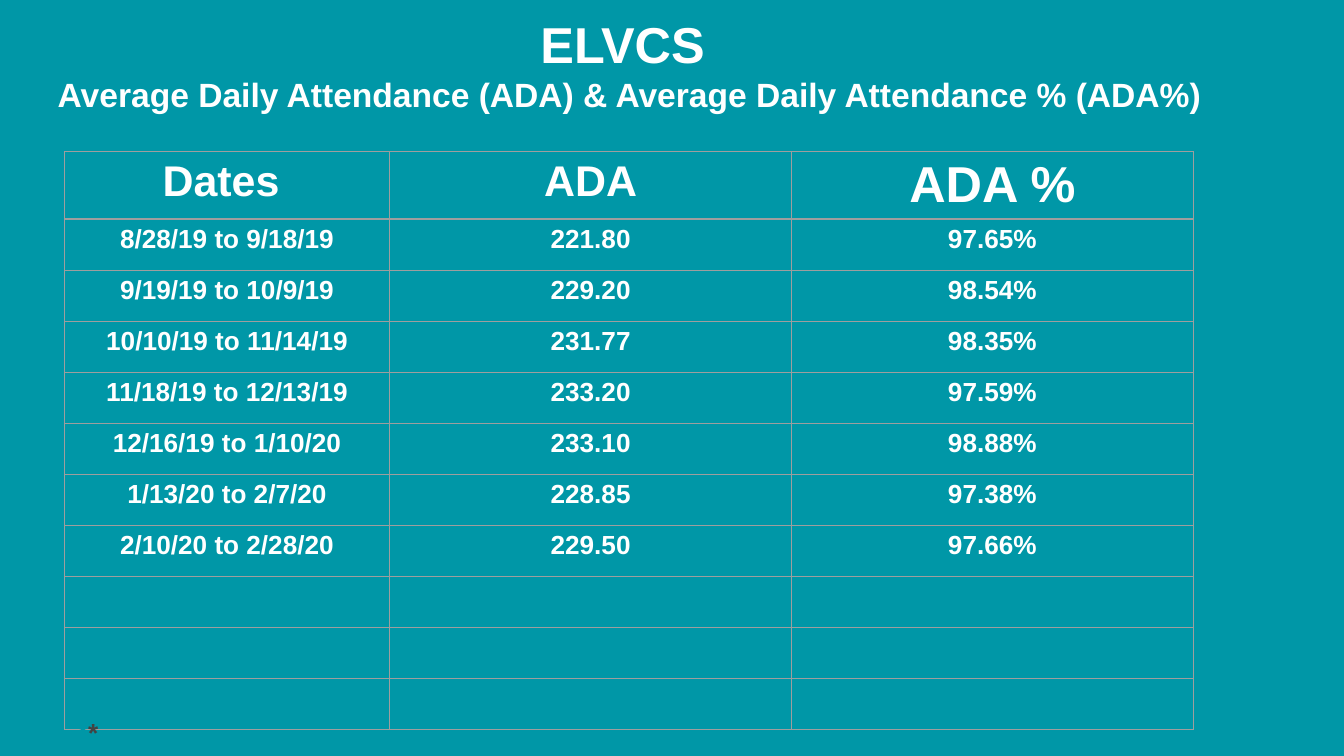
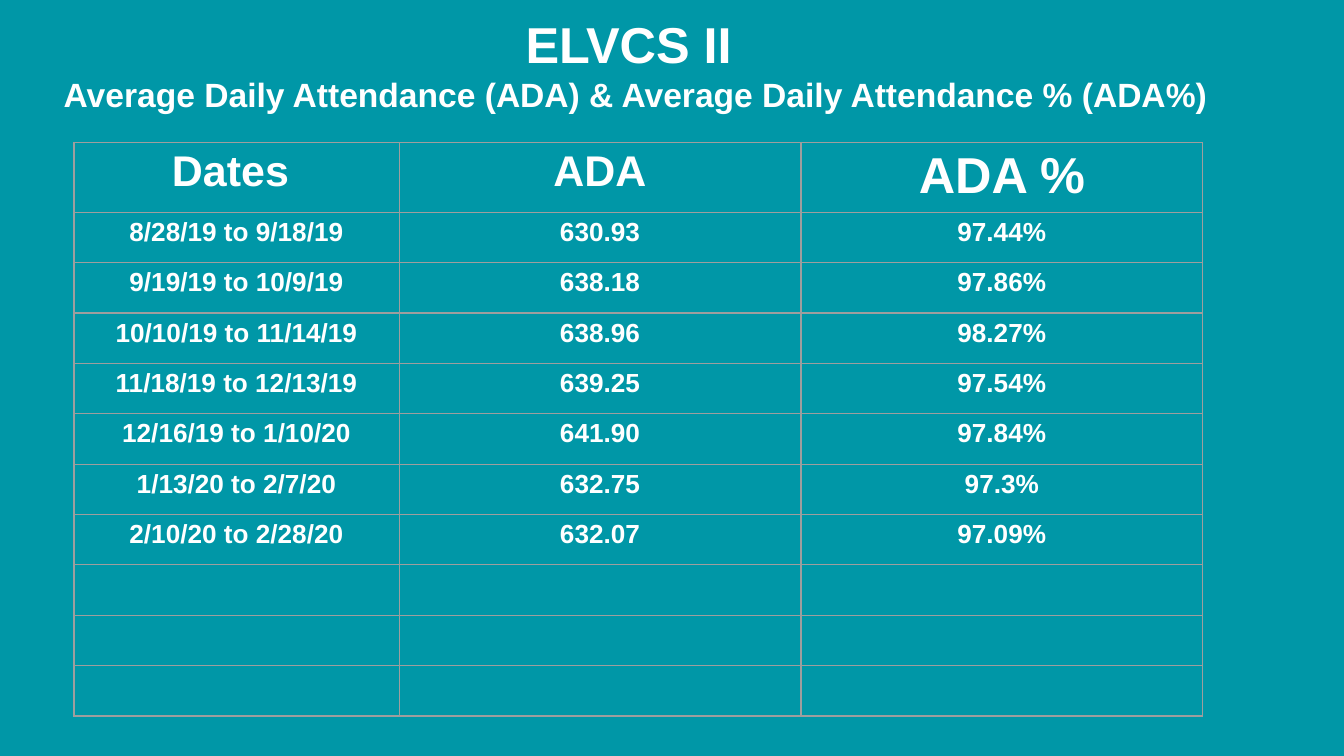
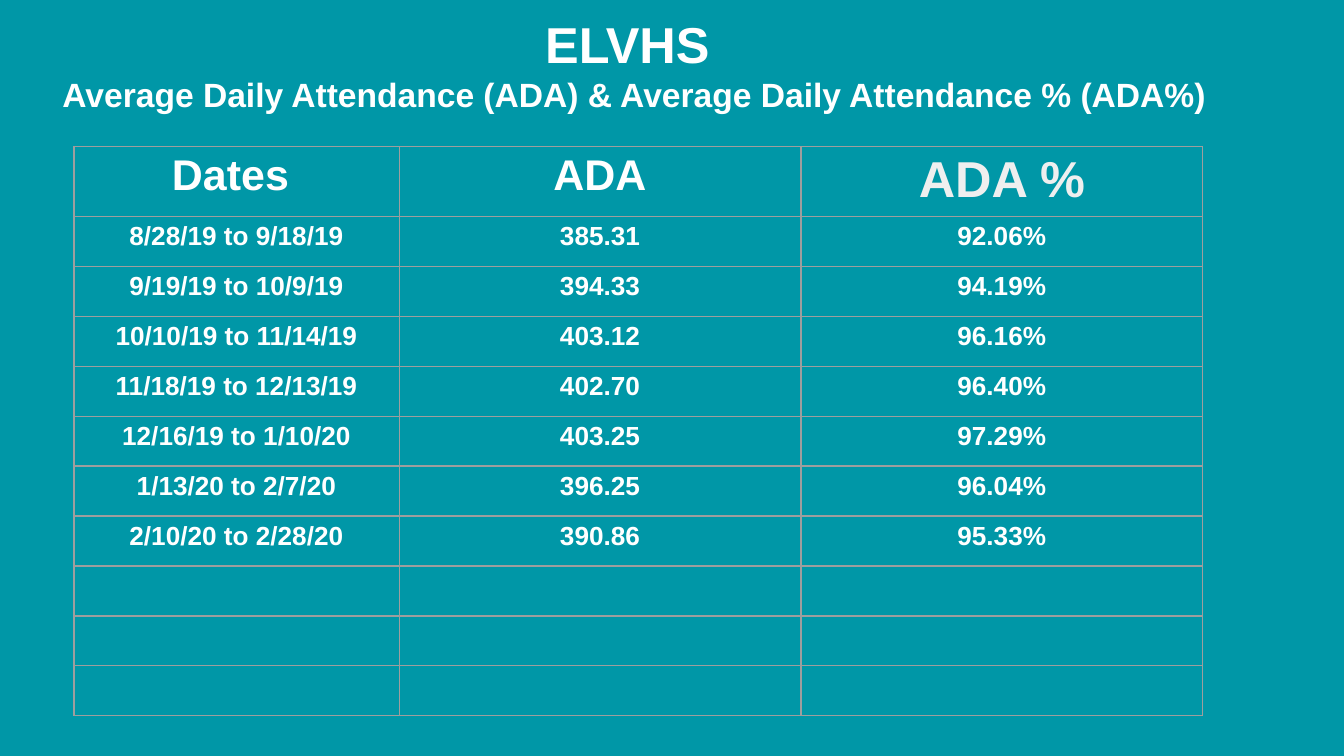
from dataclasses import dataclass

import pptx
import pptx.dml.color
import pptx.enum.text
import pptx.oxml
import pptx.oxml.ns
import pptx.util
from pptx.util import Inches

RGB = pptx.dml.color.RGBColor.from_string
CENTER = pptx.enum.text.PP_ALIGN.CENTER
TOP = pptx.enum.text.MSO_ANCHOR.TOP


@dataclass(frozen=True)
class Theme:
    font: str = "Arial"
    background: str = "0097A7"
    text: str = "FFFFFF"
    soft_text: str = "EFEFEF"
    note: str = "434343"
    border: str = "9E9E9E"
    border_width: float = 0.75
    title_size: int = 27
    subtitle_size: int = 18
    header_size: int = 23
    big_header_size: int = 27
    body_size: int = 14


@dataclass(frozen=True)
class Box:
    left: float
    top: float
    width: float
    height: float


@dataclass(frozen=True)
class School:
    name: str
    title_box: Box
    table_left: float
    table_top: float
    header_height: float
    body_height: float
    ada: tuple[str, ...]
    ada_percent: tuple[str, ...]
    percent_header_color: str


THEME = Theme()
SUBTITLE = "Average Daily Attendance (ADA) & Average Daily Attendance % (ADA%)"
HEADERS = ("Dates ", "ADA", "ADA %")
HEADER_SIZES = (THEME.header_size, THEME.header_size, THEME.big_header_size)
COLUMN_WIDTHS = (2.42, 2.99, 2.99)
CELL_MARGIN = 0.04
EMPTY_ROWS = 3
PERIODS = (
    "8/28/19 to 9/18/19",
    "9/19/19 to 10/9/19",
    "10/10/19 to 11/14/19",
    "11/18/19 to 12/13/19",
    "12/16/19 to 1/10/20",
    "1/13/20 to 2/7/20",
    "2/10/20 to 2/28/20",
)

SCHOOLS = (
    School("ELVCS ", Box(0.31, 0, 8.75, 1.13), 0.48, 1.13, 0.4, 3.8,
           ("221.80", "229.20", "231.77", "233.20", "233.10", "228.85", "229.50"),
           ("97.65%", "98.54%", "98.35%", "97.59%", "98.88%", "97.38%", "97.66%"),
           THEME.text),
    School("ELVCS II ", Box(0.3, 0, 8.86, 1.06), 0.55, 1.06, 0.52, 3.75,
           ("630.93", "638.18", "638.96", "639.25", "641.90", "632.75", "632.07"),
           ("97.44%", "97.86%", "98.27%", "97.54%", "97.84%", "97.3%", "97.09%"),
           THEME.text),
    School("ELVHS ", Box(0.35, 0, 8.74, 0.61), 0.55, 1.09, 0.52, 3.72,
           ("385.31", "394.33", "403.12", "402.70", "403.25", "396.25", "390.86"),
           ("92.06%", "94.19%", "96.16%", "96.40%", "97.29%", "96.04%", "95.33%"),
           THEME.soft_text),
)


def style_run(r, size: int, color: str = THEME.text) -> None:
    r.font.name = THEME.font
    r.font.size = pptx.util.Pt(size)
    r.font.bold = True
    r.font.color.rgb = RGB(color)


def set_margins(item, margin: float) -> None:
    item.margin_left = item.margin_right = Inches(margin)
    item.margin_top = item.margin_bottom = Inches(margin)


def place(sp, box: Box) -> None:
    sp.left, sp.top = Inches(box.left), Inches(box.top)
    sp.width, sp.height = Inches(box.width), Inches(box.height)


def add_title(slide, school: School) -> None:
    sp = slide.shapes.title
    place(sp, school.title_box)
    tf = sp.text_frame
    tf.word_wrap = True
    tf.auto_size = pptx.enum.text.MSO_AUTO_SIZE.NONE
    tf.vertical_anchor = TOP
    set_margins(tf, 0.1)
    tf.text = f"{school.name}\n{SUBTITLE}"
    for p, size in zip(tf.paragraphs, (THEME.title_size, THEME.subtitle_size)):
        p.alignment = CENTER
        style_run(p.runs[0], size)


def add_borders(cell) -> None:
    tc_pr = cell._tc.get_or_add_tcPr()
    width = pptx.util.Pt(THEME.border_width)
    for side in ("lnL", "lnR", "lnT", "lnB"):
        tc_pr.append(pptx.oxml.parse_xml(
            f'<a:{side} {pptx.oxml.ns.nsdecls("a")} w="{width}"><a:solidFill>'
            f'<a:srgbClr val="{THEME.border}"/></a:solidFill></a:{side}>'))


def fill_cell(cell, text: str, size: int, color: str) -> None:
    set_margins(cell, CELL_MARGIN)
    cell.vertical_anchor = TOP
    add_borders(cell)
    cell.fill.background()
    p = cell.text_frame.paragraphs[0]
    p.alignment = CENTER
    p.font.size = pptx.util.Pt(size)
    if text:
        p.text = text
        style_run(p.runs[0], size, color)


def add_attendance_table(slide, school: School) -> None:
    records = list(zip(PERIODS, school.ada, school.ada_percent))
    rows = [HEADERS, *records, *[("", "", "")] * EMPTY_ROWS]
    body_rows = len(rows) - 1
    heights = [school.header_height] + [school.body_height / body_rows] * body_rows
    table = slide.shapes.add_table(
        len(rows), len(HEADERS), Inches(school.table_left), Inches(school.table_top),
        Inches(sum(COLUMN_WIDTHS)), Inches(sum(heights))).table
    table.first_row = table.horz_banding = False
    for column, width in zip(table.columns, COLUMN_WIDTHS):
        column.width = Inches(width)
    for i, (values, height) in enumerate(zip(rows, heights)):
        table.rows[i].height = Inches(height)
        for j, value in enumerate(values):
            size = HEADER_SIZES[j] if i == 0 else THEME.body_size
            is_percent_header = i == 0 and j == len(HEADERS) - 1
            color = school.percent_header_color if is_percent_header else THEME.text
            fill_cell(table.cell(i, j), value, size, color)


def add_footnote_mark(slide) -> None:
    sp = slide.shapes.add_textbox(0, 0, 0, 0)
    place(sp, Box(0.54, 5.29, 4.94, 0.3))
    tf = sp.text_frame
    tf.word_wrap = True
    set_margins(tf, CELL_MARGIN)
    for color in (THEME.background, THEME.note):
        r = tf.paragraphs[0].add_run()
        r.text = "*"
        style_run(r, THEME.body_size, color)


def add_school_slide(prs, school: School):
    slide = prs.slides.add_slide(prs.slide_layouts[0])
    subtitle = slide.placeholders[1]._element
    subtitle.getparent().remove(subtitle)
    add_title(slide, school)
    add_attendance_table(slide, school)
    return slide


def main() -> None:
    prs = pptx.Presentation()
    prs.slide_width, prs.slide_height = Inches(10), Inches(10 * 9 / 16)

    # Shared background
    fill = prs.slide_master.background.fill
    fill.solid()
    fill.fore_color.rgb = RGB(THEME.background)

    # One attendance slide per school; the first carries the footnote mark
    slides = [add_school_slide(prs, school) for school in SCHOOLS]
    add_footnote_mark(slides[0])
    prs.save("out.pptx")


if __name__ == "__main__":
    main()
